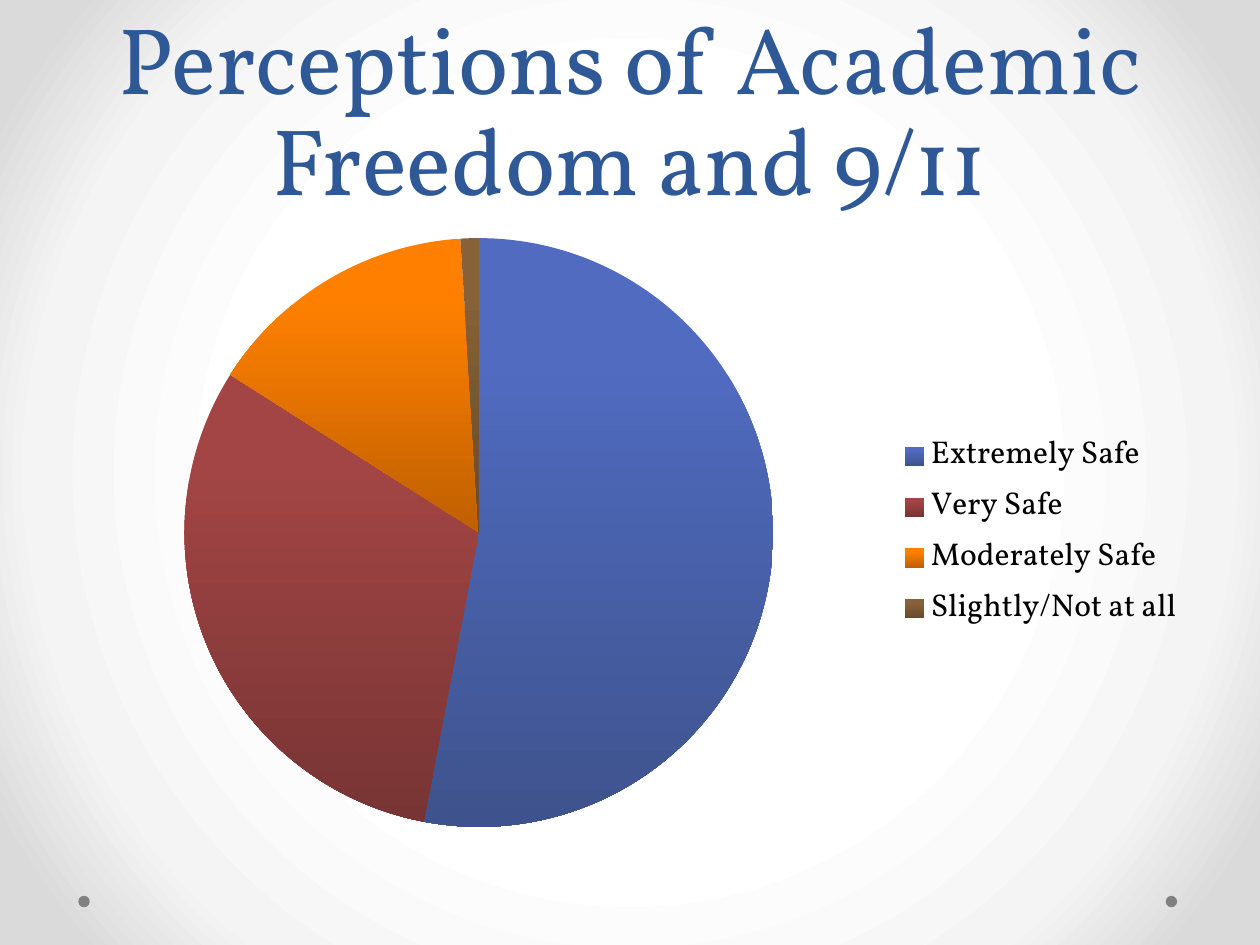
from dataclasses import dataclass

from lxml import etree
from pptx import Presentation
from pptx.chart.data import CategoryChartData
from pptx.dml.color import RGBColor
from pptx.enum.chart import XL_CHART_TYPE, XL_LEGEND_POSITION
from pptx.enum.shapes import MSO_SHAPE
from pptx.enum.text import MSO_ANCHOR, PP_ALIGN
from pptx.oxml.ns import qn
from pptx.util import Cm, Pt

PIE = XL_CHART_TYPE.PIE
LEGEND_RIGHT = XL_LEGEND_POSITION.RIGHT
OVAL = MSO_SHAPE.OVAL
BOTTOM = MSO_ANCHOR.BOTTOM
CENTER = PP_ALIGN.CENTER


@dataclass(frozen=True)
class Theme:
    font: str = "Vollkorn"
    title_color: str = "2F5897"
    title_size: int = 54
    title_spacing: int = 58
    chart_color: str = "000000"
    chart_size: int = 18
    dot_color: str = "808080"
    backdrop: tuple = ((50, "FFFFFF"), (76, "F4F4F4"), (92, "DADADA"))
    slices: tuple = (
        ("506BC0", "3E538D"),
        ("A34545", "783434"),
        ("FF8000", "C06000"),
        ("886039", "664A2E"),
    )


class SlideBuilder:
    def __init__(self, slide, theme):
        self.slide = slide
        self.theme = theme

    def style_font(self, font, size, color):
        font.name = self.theme.font
        font.size = Pt(size)
        font.color.rgb = RGBColor.from_string(color)

    def radial_background(self):
        self.slide.background.fill.gradient()
        gradient = self.slide.element.find(".//" + qn("a:gradFill"))
        for child in list(gradient):
            gradient.remove(child)
        stops = etree.SubElement(gradient, qn("a:gsLst"))
        for percent, color in self.theme.backdrop:
            stop = etree.SubElement(stops, qn("a:gs"), pos=str(percent * 1000))
            etree.SubElement(stop, qn("a:srgbClr"), val=color)
        path = etree.SubElement(gradient, qn("a:path"), path="circle")
        sides = dict.fromkeys("ltrb", "50000")
        etree.SubElement(path, qn("a:fillToRect"), **sides)

    def dot(self, left, top, size):
        dot = self.slide.shapes.add_shape(OVAL, left, top, size, size)
        dot.shadow.inherit = False
        dot.fill.solid()
        dot.fill.fore_color.rgb = RGBColor.from_string(self.theme.dot_color)
        dot.line.fill.background()

    def title(self, text, left, top, width, height):
        frame = self.slide.shapes.add_textbox(left, top, width, height).text_frame
        frame.word_wrap = True
        frame.vertical_anchor = BOTTOM
        paragraph = frame.paragraphs[0]
        paragraph.alignment = CENTER
        paragraph.line_spacing = Pt(self.theme.title_spacing)
        run = paragraph.add_run()
        run.text = text
        self.style_font(run.font, self.theme.title_size, self.theme.title_color)

    def pie(self, shares, left, top, width, height):
        data = CategoryChartData()
        data.categories = list(shares)
        data.add_series("Series 1", list(shares.values()))
        chart = self.slide.shapes.add_chart(PIE, left, top, width, height, data).chart
        self.style_font(chart.font, self.theme.chart_size, self.theme.chart_color)
        chart.has_title = False
        chart.has_legend = True
        chart.legend.position = LEGEND_RIGHT
        chart.legend.include_in_layout = False
        plot = chart.plots[0]
        plot.vary_by_categories = True
        for index, shades in enumerate(self.theme.slices):
            fill = plot.series[0].points[index].format.fill
            fill.gradient()
            fill.gradient_angle = 270
            for stop, shade, position in zip(fill.gradient_stops, shades, (0.2, 1)):
                stop.color.rgb = RGBColor.from_string(shade)
                stop.position = position


def main():
    presentation = Presentation()
    presentation.slide_width = Cm(25.4)
    presentation.slide_height = Cm(19.05)
    slide = presentation.slides.add_slide(presentation.slide_layouts[6])
    builder = SlideBuilder(slide, Theme())

    builder.radial_background()
    for dot_left in (23.5, 1.58):
        builder.dot(Cm(dot_left), Cm(18.06), Cm(0.23))

    margin = Cm(1.27)
    content_width = presentation.slide_width - 2 * margin
    title_height = Cm(4.45)
    builder.title("Perceptions of Academic Freedom and 9/11",
                  margin, 0, content_width, title_height)
    safety_shares = {
        "Extremely Safe": 53,
        "Very Safe": 31,
        "Moderately Safe": 15,
        "Slightly/Not at all": 1,
    }
    builder.pie(safety_shares, margin, title_height, content_width, Cm(12.57))

    presentation.save("out.pptx")


if __name__ == "__main__":
    main()
